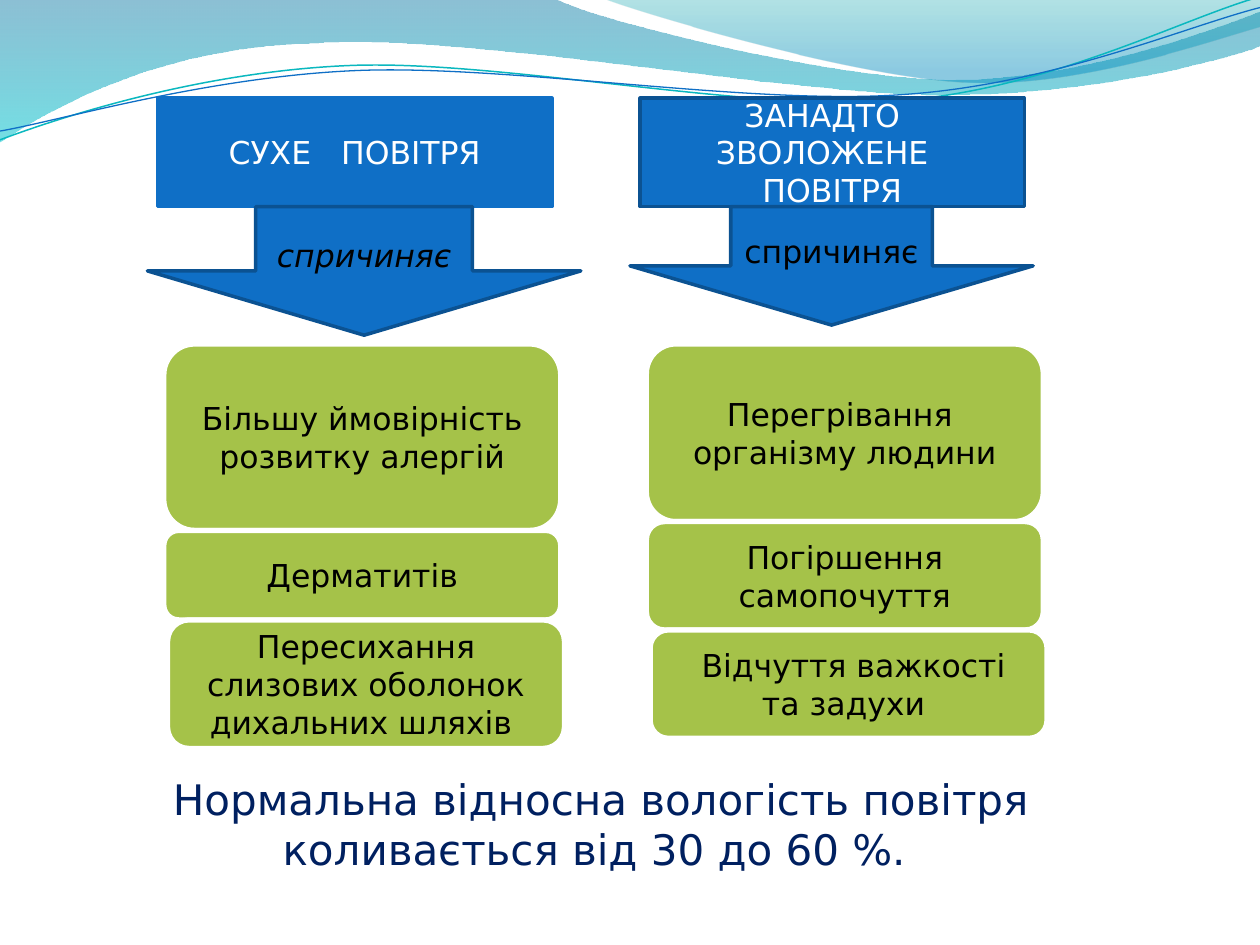
from dataclasses import dataclass
from math import cos, radians, sin

from lxml import etree
from pptx import Presentation
from pptx.dml.color import RGBColor
from pptx.enum.shapes import MSO_SHAPE
from pptx.enum.text import MSO_ANCHOR, MSO_AUTO_SIZE, PP_ALIGN
from pptx.oxml.ns import qn
from pptx.util import Inches, Pt

BOX = MSO_SHAPE.FLOWCHART_PROCESS
ARROW = MSO_SHAPE.DOWN_ARROW
CARD = MSO_SHAPE.FLOWCHART_ALTERNATE_PROCESS
CENTER = PP_ALIGN.CENTER
MIDDLE = MSO_ANCHOR.MIDDLE
FIT_SHAPE = MSO_AUTO_SIZE.SHAPE_TO_FIT_TEXT

FONT = "DejaVu Sans"
BLUE, DARK_BLUE, GREEN = "0F6FC6", "0B5292", "A5C249"
WHITE, BLACK, NAVY = "FFFFFF", "000000", "002060"
TILT = 2.7

Point = tuple[float, float]


@dataclass
class Stop:
    position: float
    color: str
    opacity: int


@dataclass
class Wave:
    start: Point
    segments: list[tuple[float, ...]]
    stops: tuple[Stop, ...] = ()
    line: str = ""
    width: float = 0
    center: Point = (0, 0)


@dataclass
class Card:
    text: str
    height: float
    shift: float = 0


@dataclass
class Column:
    title: str
    box_left: float
    box_width: float
    box_line: str
    arrow_left: float
    arrow_width: float
    arrow_height: float
    italic: bool
    cards_left: float
    cards: list[Card]


WAVES = [
    Wave((0, 0), [
        (4.4, -0.01),
        (4.76, 0.17, 6.64, 0.63, 7.58, 0.63),
        (8.53, 0.63, 9.58, 0.26, 10, 0.09),
        (10.01, 0.36),
        (9.83, 0.44, 8.7, 0.76, 7.46, 0.75),
        (6.22, 0.75, 3.82, 0.28, 2.57, 0.34),
        (1.29, 0.36, 0.46, 0.83, -0.01, 1.13),
        (0, 0),
    ], (Stop(0, "0074A1", 45), Stop(1, "00C6CF", 55))),
    Wave((4.79, -0.01), [
        (5.09, 0.11, 6.82, 0.62, 7.69, 0.65),
        (8.56, 0.69, 9.61, 0.32, 10, 0.21),
        (10, 0),
        (4.79, -0.01),
    ], (Stop(0, "00A1A9", 30), Stop(0.8, "008BBF", 45))),
    Wave((0, 1.11), [
        (0.48, 0.93, 1.58, 0.57, 2.77, 0.52),
        (3.95, 0.47, 5.93, 0.89, 7.13, 0.8),
        (8.33, 0.71, 9.38, 0.15, 9.98, -0.02),
    ], line="0AB8BF", width=0.85, center=(4.99, 0.575)),
    Wave((0, 1.04), [
        (0.47, 0.96, 1.64, 0.61, 2.83, 0.56),
        (4.03, 0.51, 5.97, 0.84, 7.17, 0.75),
        (8.36, 0.67, 9.41, 0.21, 10, 0.06),
    ], line=BLUE, width=0.75, center=(4.995, 0.59)),
]

COLUMNS = [
    Column("СУХЕ   ПОВІТРЯ", 1.25, 3.13, BLUE, 1.17, 3.44, 1.02, True, 1.3, [
        Card("Більшу ймовірність розвитку алергій", 1.48),
        Card(" Дерматитів ", 0.71),
        Card("Пересихання слизових оболонок дихальних шляхів ", 1.02, 0.03),
    ]),
    Column("ЗАНАДТО   ЗВОЛОЖЕНЕ   ПОВІТРЯ", 5.08, 3.05, DARK_BLUE,
           5, 3.2, 0.94, False, 5.13, [
               Card("Перегрівання  організму людини", 1.41),
               Card("Погіршення самопочуття", 0.86),
               Card(" Відчуття важкості та задухи ", 0.86, 0.03),
           ]),
]


def rgb(value: str) -> RGBColor:
    return RGBColor.from_string(value)


def turn(point: Point, center: Point, degrees: float) -> Point:
    a = radians(degrees)
    dx, dy = point[0] - center[0], point[1] - center[1]
    return (center[0] + dx * cos(a) - dy * sin(a),
            center[1] + dx * sin(a) + dy * cos(a))


def curve_segments(sp, wave: Wave) -> None:
    lines = iter(list(sp.element.spPr.iter(qn("a:lnTo"))))
    for segment in wave.segments:
        first = next(lines)
        if len(segment) == 6:
            first.tag_curve = etree.Element(qn("a:cubicBezTo"))
            curve = first.tag_curve
            first.addprevious(curve)
            for line in (first, next(lines), next(lines)):
                curve.append(line[0])
                line.getparent().remove(line)


def add_wave(s, wave: Wave) -> None:
    closed = bool(wave.stops)
    points = [wave.start]
    for segment in wave.segments:
        points += zip(segment[::2], segment[1::2])
    if not closed:
        points = [turn(point, wave.center, TILT) for point in points]
    emu = [(Inches(x), Inches(y)) for x, y in points]
    builder = s.shapes.build_freeform(*emu[0])
    builder.add_line_segments(emu[1:], close=closed)
    sp = builder.convert_to_shape()
    curve_segments(sp, wave)
    sp.shadow.inherit = False
    if not closed:
        sp.rotation = 360 - TILT
        sp.fill.background()
        sp.line.color.rgb = rgb(wave.line)
        sp.line.width = Pt(wave.width)
        return
    sp.line.fill.background()
    sp.fill.gradient()
    sp.fill.gradient_angle = 270
    for target, stop in zip(sp.fill.gradient_stops, wave.stops):
        target.position = stop.position
        target.color.rgb = rgb(stop.color)
    for color, stop in zip(sp.element.spPr.iter(qn("a:srgbClr")), wave.stops):
        etree.SubElement(color, qn("a:alpha"), val=str(stop.opacity * 1000))


def add_text(sp, text: str, size: int, color: str, italic: bool = False) -> None:
    tf = sp.text_frame
    tf.word_wrap = True
    p = tf.paragraphs[0]
    p.alignment = CENTER
    r = p.add_run()
    r.text = text
    r.font.name = FONT
    r.font.size = Pt(size)
    r.font.italic = italic
    r.font.color.rgb = rgb(color)


def add_block(s, kind, left: float, top: float, width: float, height: float,
              fill: str, line: str, line_width: float, text: str, color: str,
              italic: bool = False) -> None:
    sp = s.shapes.add_shape(kind, Inches(left), Inches(top), Inches(width), Inches(height))
    sp.shadow.inherit = False
    sp.fill.solid()
    sp.fill.fore_color.rgb = rgb(fill)
    sp.line.color.rgb = rgb(line)
    sp.line.width = Pt(line_width)
    sp.text_frame.vertical_anchor = MIDDLE
    add_text(sp, text, 18, color, italic)


def add_column(s, col: Column) -> None:
    add_block(s, BOX, col.box_left, 0.78, col.box_width, 0.86,
              BLUE, col.box_line, 2, col.title, WHITE)
    add_block(s, ARROW, col.arrow_left, 1.64, col.arrow_width, col.arrow_height,
              BLUE, DARK_BLUE, 2, "спричиняє", BLACK, col.italic)
    top = 2.73
    for card in col.cards:
        add_block(s, CARD, col.cards_left + card.shift, top, 3.15, card.height,
                  GREEN, WHITE, 3, card.text, BLACK)
        top += card.height


def main() -> None:
    prs = Presentation()
    prs.slide_width, prs.slide_height = Inches(10), Inches(7.5)
    s = prs.slides.add_slide(prs.slide_layouts[6])
    for wave in WAVES:
        add_wave(s, wave)
    for col in COLUMNS:
        add_column(s, col)
    sp = s.shapes.add_textbox(Inches(0.94), Inches(6.09), Inches(7.66), Inches(0.91))
    add_text(sp, "Нормальна відносна вологість повітря коливається від 30 до 60 %. ", 24, NAVY)
    sp.text_frame.auto_size = FIT_SHAPE
    prs.save("out.pptx")


if __name__ == "__main__":
    main()
